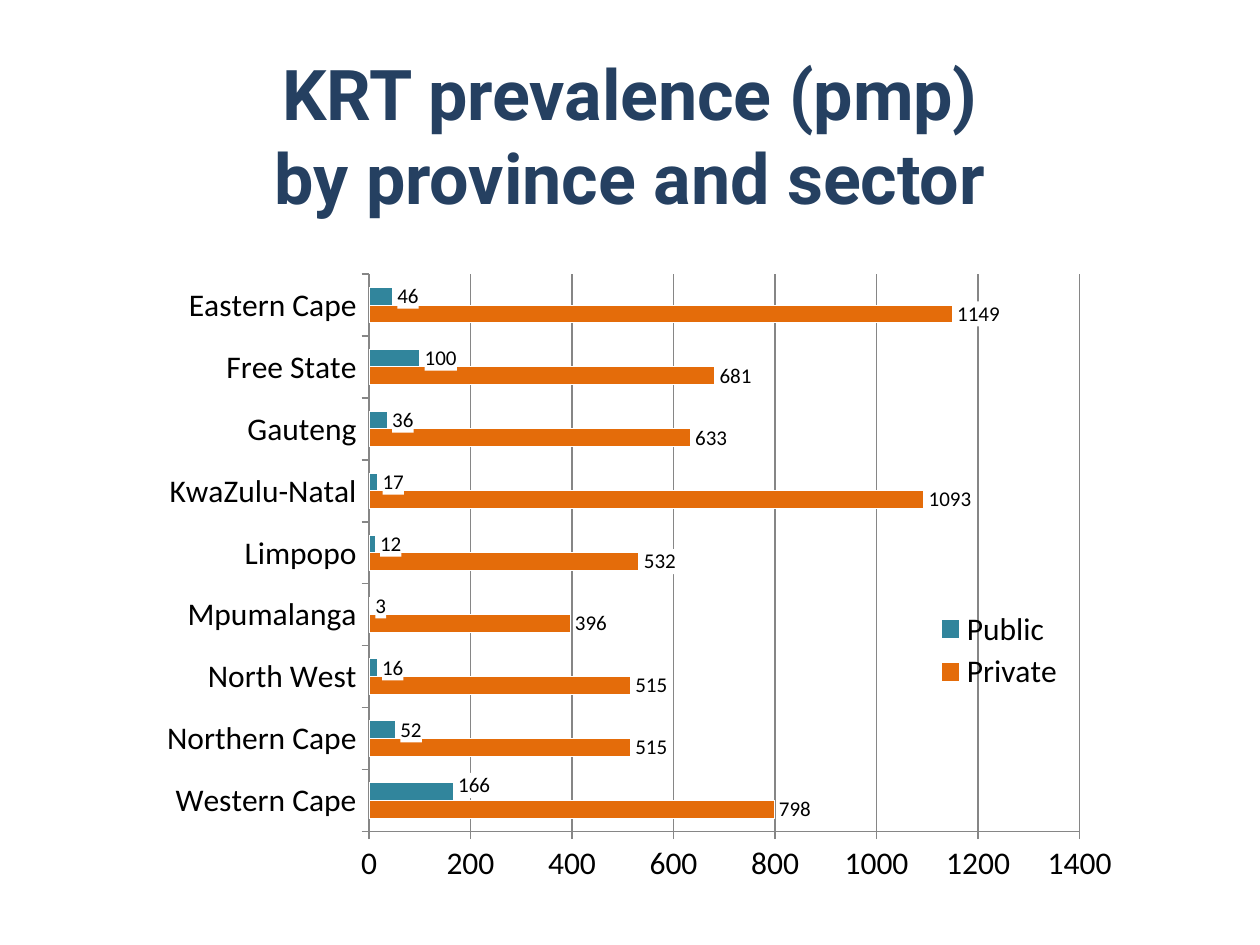
from dataclasses import dataclass

from lxml.etree import SubElement
from pptx import Presentation
from pptx.chart.data import CategoryChartData
from pptx.dml.color import RGBColor
from pptx.enum.chart import (XL_CHART_TYPE as ChartType, XL_LABEL_POSITION as LabelPos,
                             XL_LEGEND_POSITION as LegendPos, XL_TICK_MARK as Tick)
from pptx.enum.text import MSO_ANCHOR, PP_ALIGN
from pptx.oxml import parse_xml
from pptx.oxml.ns import nsdecls, qn
from pptx.util import Pt

PX = 914400 / 126


@dataclass(frozen=True)
class Theme:
    title_font: str = "Roboto"
    body_font: str = "Calibri"
    title_size: int = 40
    body_size: int = 18
    label_size: int = 12
    title: str = "254061"
    text: str = "000000"
    paper: str = "FFFFFF"
    grid: str = "868686"
    private: str = "E46C0A"
    public: str = "31859C"


THEME = Theme()
# province, private, public; listed from the bottom bar up
PREVALENCE = [
    ("Western Cape", 798, 166),
    ("Northern Cape", 515, 52),
    ("North West", 515, 16),
    ("Mpumalanga", 396, 3),
    ("Limpopo", 532, 12),
    ("KwaZulu-Natal", 1093, 17),
    ("Gauteng", 633, 36),
    ("Free State", 681, 100),
    ("Eastern Cape", 1149, 46),
]


def emu(*lengths):
    return [round(n * PX) for n in lengths]


def rgb(code):
    return RGBColor.from_string(code)


def style_font(font, name, size, color, bold=False):
    font.name, font.size, font.bold = name, Pt(size), bold
    font.color.rgb = rgb(color)


def add_title(slide, box, text):
    tf = slide.shapes.add_textbox(*emu(*box)).text_frame
    tf.word_wrap = True
    tf.vertical_anchor = MSO_ANCHOR.MIDDLE
    p = tf.paragraphs[0]
    p.text = text
    p.alignment = PP_ALIGN.CENTER
    style_font(p.font, THEME.title_font, THEME.title_size, THEME.title, bold=True)


def manual_layout(x, y, w=None, h=None, inner=False, edge=True):
    """Build a c:layout from fractions of the chart; edge=False means an offset."""
    layout = parse_xml(f"<c:layout {nsdecls('c')}><c:manualLayout/></c:layout>")
    values = [("layoutTarget", "inner")] if inner else []
    values += [("xMode", "edge"), ("yMode", "edge")] if edge else []
    values += [("x", x), ("y", y), ("w", w), ("h", h)]
    for tag, value in values:
        if value is not None:
            SubElement(layout[0], qn(f"c:{tag}")).set("val", str(value))
    return layout


def set_layout(element, layout, after=None):
    for old in element.findall(qn("c:layout")):
        element.remove(old)
    if after is None:
        element.insert(0, layout)
    else:
        element.find(qn(after)).addnext(layout)


def style_series(series, color):
    series.format.fill.solid()
    series.format.fill.fore_color.rgb = rgb(color)
    series.format.line.color.rgb = rgb(THEME.paper)
    labels = series.data_labels
    labels.show_value = True
    labels.number_format, labels.number_format_is_linked = "0", False
    labels.position = LabelPos.OUTSIDE_END
    style_font(labels.font, THEME.body_font, THEME.label_size, THEME.text)
    backing = parse_xml(
        f'<c:spPr {nsdecls("c", "a")}><a:solidFill><a:srgbClr val="{THEME.paper}"/>'
        "</a:solidFill></c:spPr>")
    labels._element.find(qn("c:txPr")).addprevious(backing)


def nudge_label(point, dx, dy):
    label = point.data_label
    style_font(label.font, THEME.body_font, THEME.label_size, THEME.text)
    label.position = LabelPos.OUTSIDE_END
    set_layout(label._dLbl, manual_layout(dx, dy, edge=False), after="c:idx")


def style_axes(chart):
    value_axis = chart.value_axis
    value_axis.minimum_scale, value_axis.maximum_scale = 0, 1400
    value_axis.major_unit = 200
    value_axis.has_major_gridlines = True
    value_axis.major_gridlines.format.line.color.rgb = rgb(THEME.grid)
    value_axis.tick_labels.number_format = "0"
    value_axis.tick_labels.number_format_is_linked = False
    for axis in (value_axis, chart.category_axis):
        axis.major_tick_mark = Tick.OUTSIDE
        axis.format.line.color.rgb = rgb(THEME.grid)


def add_prevalence_chart(slide, box):
    provinces, private, public = zip(*PREVALENCE)
    data = CategoryChartData(number_format="0")
    data.categories = provinces
    data.add_series("Private", private)
    data.add_series("Public", public)
    chart = slide.shapes.add_chart(ChartType.BAR_CLUSTERED, *emu(*box), data).chart
    style_font(chart.font, THEME.body_font, THEME.body_size, THEME.text)
    chart.has_title = False
    style_axes(chart)

    plot = chart.plots[0]
    plot.gap_width, plot.overlap = 150, 0
    plot.vary_by_categories = False
    for series, color in zip(plot.series, (THEME.private, THEME.public)):
        style_series(series, color)
    nudge_label(plot.series[1].points[0], 0, -0.01)

    chart.has_legend = True
    legend = chart.legend
    legend.position = LegendPos.RIGHT
    legend.include_in_layout = False
    set_layout(legend._element, manual_layout(0.81, 0.55, 0.13, 0.14), after="c:legendPos")
    plot_area = chart._chartSpace.chart.plotArea
    set_layout(plot_area, manual_layout(0.234, 0.03, 0.723, 0.874, inner=True))


def main():
    prs = Presentation()
    prs.slide_width, prs.slide_height = emu(1260, 945)
    slide = prs.slides.add_slide(prs.slide_layouts[6])
    add_prevalence_chart(slide, (139, 255, 983, 638))
    add_title(slide, (0, 55, 1260, 158), "KRT prevalence (pmp)\vby province and sector")
    prs.save("out.pptx")


if __name__ == "__main__":
    main()
